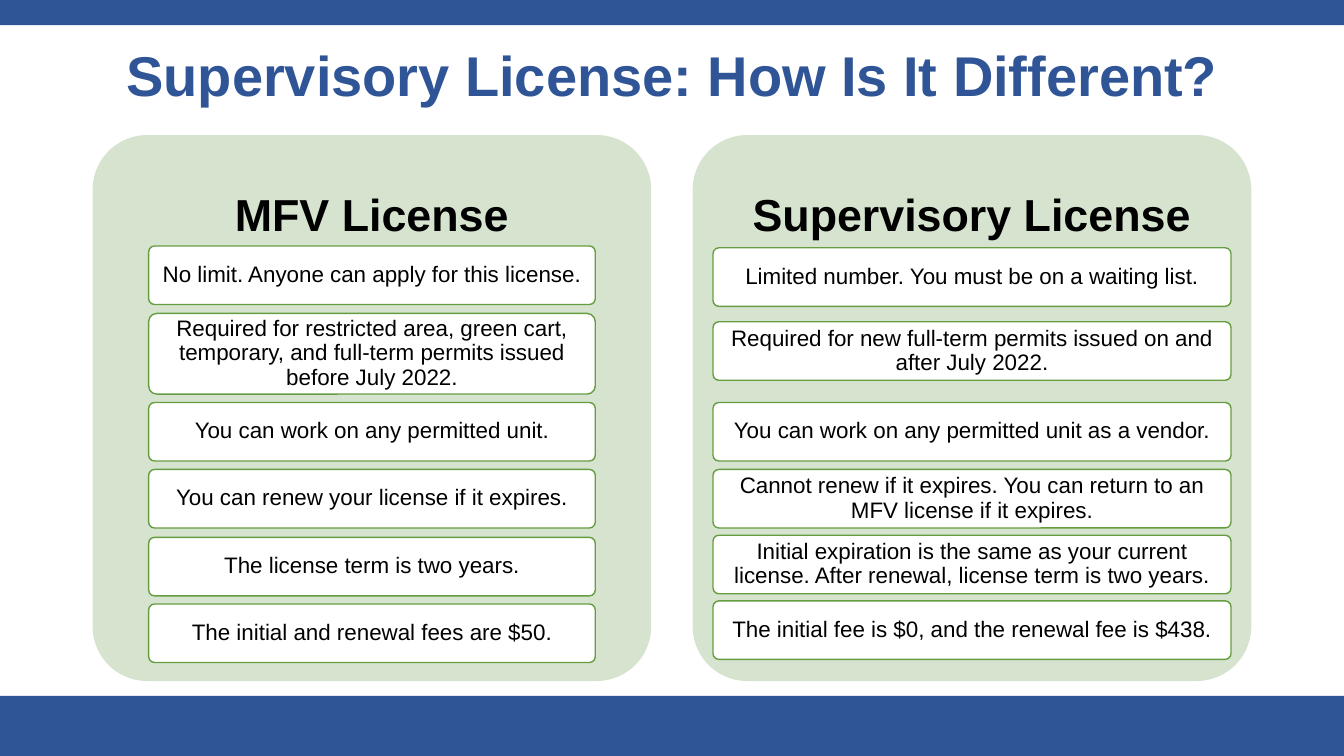
from dataclasses import dataclass

from pptx import Presentation
from pptx.dml.color import RGBColor
from pptx.enum.shapes import MSO_SHAPE
from pptx.enum.text import MSO_ANCHOR, MSO_AUTO_SIZE, PP_ALIGN
from pptx.util import Pt


@dataclass(frozen=True)
class Theme:
    font: str = "Arial"
    blue: str = "2F5597"
    panel: str = "D5E3CF"
    card: str = "FFFFFF"
    border: str = "669D40"
    ink: str = "000000"
    title_size: int = 40
    heading_size: int = 32
    card_size: int = 16


THEME = Theme()
SLIDE_WIDTH, SLIDE_HEIGHT = 960, 540
PANEL_TOP, PANEL_WIDTH, PANEL_HEIGHT = 96.5, 399, 390
CARD_HEIGHT, TALL_CARD_HEIGHT = 41.8, 57.6

MFV_CARDS = [
    (175.7, CARD_HEIGHT, "No limit. Anyone can apply for this license."),
    (223.9, TALL_CARD_HEIGHT, "Required for restricted area, green cart, temporary, "
     "and full-term permits issued before July 2022."),
    (287.5, CARD_HEIGHT, "You can work on any permitted unit."),
    (335.3, CARD_HEIGHT, "You can renew your license if it expires."),
    (383.8, CARD_HEIGHT, "The license term is two years."),
    (431.4, CARD_HEIGHT, "The initial and renewal fees are $50."),
]
SUPERVISORY_CARDS = [
    (177, CARD_HEIGHT, "Limited number. You must be on a waiting list."),
    (229.8, CARD_HEIGHT, "Required for new full-term permits issued on and after July 2022."),
    (287.5, CARD_HEIGHT, "You can work on any permitted unit as a vendor."),
    (335.3, CARD_HEIGHT, "Cannot renew if it expires. You can return to an MFV license "
     "if it expires."),
    (382.3, CARD_HEIGHT, "Initial expiration is the same as your current license. "
     "After renewal, license term is two years."),
    (429.2, CARD_HEIGHT, "The initial fee is $0, and the renewal fee is $438."),
]


def write_text(shape, text, size, color, bold, margins):
    frame = shape.text_frame
    frame.text = text
    frame.word_wrap = True
    frame.auto_size = MSO_AUTO_SIZE.NONE
    frame.vertical_anchor = MSO_ANCHOR.MIDDLE
    frame.margin_left, frame.margin_top, frame.margin_right, frame.margin_bottom = map(Pt, margins)
    para = frame.paragraphs[0]
    para.alignment = PP_ALIGN.CENTER
    para.line_spacing = 0.9
    font = para.runs[0].font
    font.name = THEME.font
    font.size = Pt(size)
    font.bold = bold
    font.color.rgb = RGBColor.from_string(color)


def add_block(page, kind, left, top, width, height, fill, border=None):
    block = page.shapes.add_shape(kind, Pt(left), Pt(top), Pt(width), Pt(height))
    block.shadow.inherit = False
    block.fill.solid()
    block.fill.fore_color.rgb = RGBColor.from_string(fill)
    if border:
        block.line.color.rgb = RGBColor.from_string(border)
        block.line.width = Pt(1)
    else:
        block.line.fill.background()
    return block


def add_rounded(page, left, top, width, height, fill, border=None):
    block = add_block(page, MSO_SHAPE.ROUNDED_RECTANGLE, left, top, width, height, fill, border)
    block.adjustments[0] = 0.1
    return block


def add_band(page, top, height):
    add_block(page, MSO_SHAPE.RECTANGLE, 0, top, SLIDE_WIDTH, height, THEME.blue)


def set_title(page, text):
    title = page.shapes.title
    title.left, title.top, title.width, title.height = Pt(66), Pt(28.8), Pt(828), Pt(54)
    write_text(title, text, THEME.title_size, THEME.blue, True, (7.2, 3.6, 7.2, 3.6))


def add_license_panel(page, left, heading, card_width, cards):
    panel = add_rounded(page, left, PANEL_TOP, PANEL_WIDTH, PANEL_HEIGHT, THEME.panel)
    write_text(panel, heading, THEME.heading_size, THEME.ink, True, (0, 0, 0, 273))
    card_left = left + (PANEL_WIDTH - card_width) / 2
    for top, height, text in cards:
        card = add_rounded(page, card_left, top, card_width, height, THEME.card, THEME.border)
        write_text(card, text, THEME.card_size, THEME.ink, False, (3, 2.4, 3, 2.4))


def main():
    deck = Presentation()
    deck.slide_width, deck.slide_height = Pt(SLIDE_WIDTH), Pt(SLIDE_HEIGHT)
    page = deck.slides.add_slide(deck.slide_layouts.get_by_name("Title Only"))
    add_band(page, 0, 18)
    add_band(page, 497, 43)
    set_title(page, "Supervisory License: How Is It Different?")
    add_license_panel(page, 66.2, "MFV License", 319, MFV_CARDS)
    add_license_panel(page, 494.8, "Supervisory License", 370, SUPERVISORY_CARDS)
    deck.save("out.pptx")


if __name__ == "__main__":
    main()
